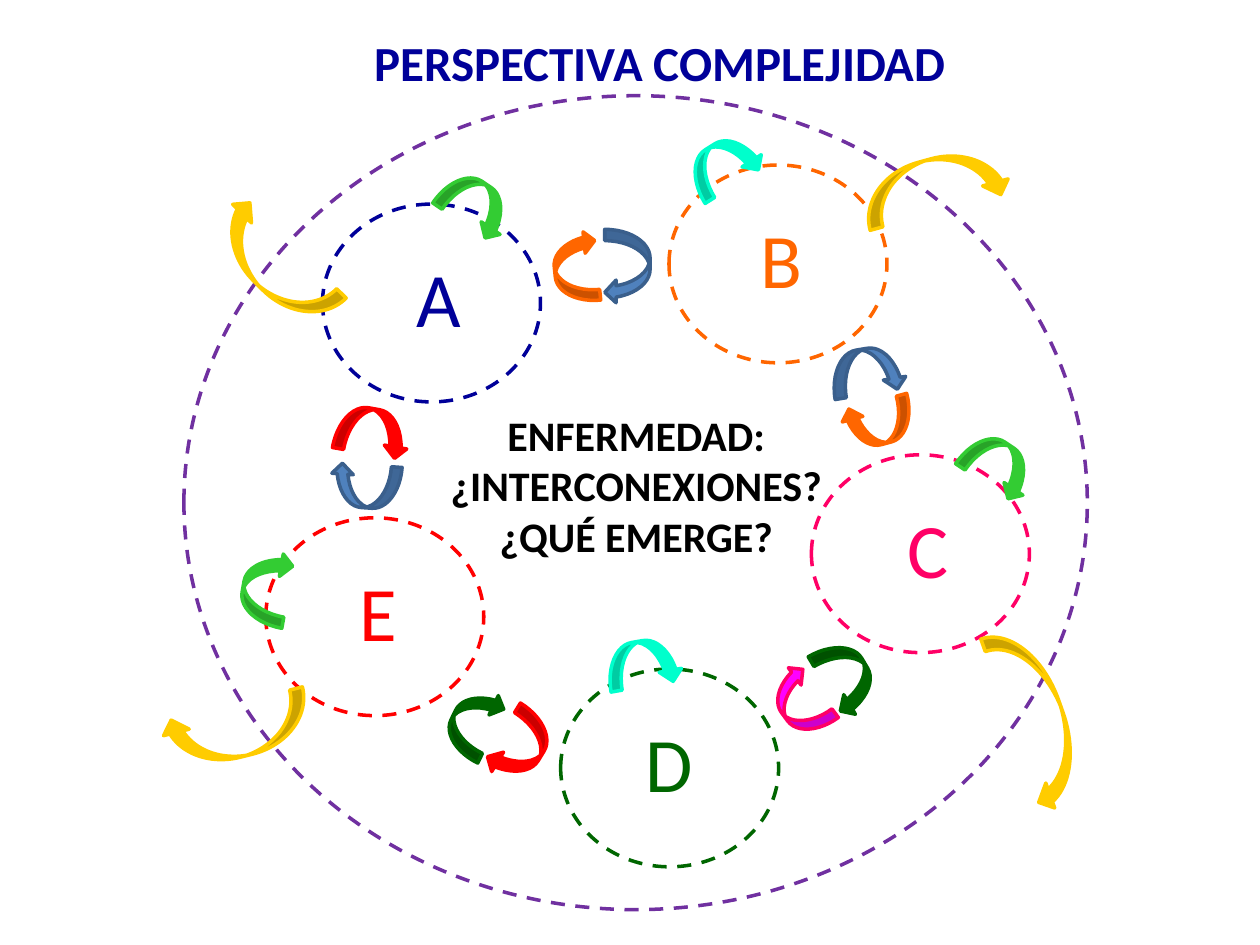
"""Build the slide on complexity: five linked systems inside one whole."""
from pptx import Presentation
from pptx.dml.color import RGBColor
from pptx.enum import dml, shapes, text
from pptx.util import Inches, Pt

NAVY = RGBColor(0x00, 0x00, 0x99)
ORANGE = RGBColor(0xFF, 0x66, 0x00)
PINK = RGBColor(0xFF, 0x00, 0x66)
RED = RGBColor(0xFF, 0x00, 0x00)
GREEN = RGBColor(0x00, 0x66, 0x00)
PURPLE = RGBColor(0x70, 0x30, 0xA0)
MAGENTA = RGBColor(0xFF, 0x00, 0xFF)
BLUE = RGBColor(0x4F, 0x81, 0xBD)
STEEL = RGBColor(0x3A, 0x5F, 0x8C)
LIME = RGBColor(0x33, 0xCC, 0x33)
AQUA = RGBColor(0x00, 0xFF, 0xCC)
GOLD = RGBColor(0xFF, 0xCC, 0x00)
BLACK = RGBColor(0x00, 0x00, 0x00)

TITLE = "PERSPECTIVA COMPLEJIDAD"
CENTER = ["ENFERMEDAD:", "¿INTERCONEXIONES?", "¿QUÉ EMERGE?"]
WHOLE = (1.46, 0.76, 7.17, 6.46)
RING = (1.73, 1.57)
DROP = 0.32

# letter, ring left, ring top, letter left, letter width, colour
SYSTEMS = [
    ("A", 2.56, 1.62, 3.2, 0.56, NAVY),
    ("B", 5.31, 1.31, 5.93, 0.54, ORANGE),
    ("C", 6.44, 3.61, 7.1, 0.53, PINK),
    ("D", 4.45, 5.31, 5.02, 0.58, GREEN),
    ("E", 2.11, 4.11, 2.75, 0.5, RED),
]

WIDE, SLIM = (0.36, 0.59), (0.34, 0.56)
LONG, TALL = (0.42, 1.18), (0.42, 1.48)

LINKS = [
    (3.95, 5.63, WIDE, 31.5, RED, RED),
    (3.59, 5.45, SLIM, 205.7, GREEN, GREEN),
    (6.54, 5.08, WIDE, 329.4, GREEN, GREEN),
    (6.18, 5.29, SLIM, 143.6, MAGENTA, PINK),
    (6.71, 2.65, WIDE, 260.6, BLUE, STEEL),
    (6.8, 3.08, SLIM, 74.8, ORANGE, ORANGE),
    (4.8, 1.82, WIDE, 0, BLUE, STEEL),
    (4.4, 1.84, SLIM, 174.2, ORANGE, ORANGE),
    (2.78, 3.13, WIDE, 279.9, RED, RED),
    (2.73, 3.58, SLIM, 94.1, BLUE, STEEL),
]
LOOPS = [
    (3.6, 1.33, WIDE, 303.8, LIME, LIME),
    (7.75, 3.4, WIDE, 303.8, LIME, LIME),
    (1.93, 4.37, WIDE, 189.9, LIME, LIME),
    (5.57, 1.01, WIDE, 237.8, AQUA, AQUA),
    (4.93, 4.97, WIDE, 260.2, AQUA, AQUA),
]
EXITS = [
    (1.97, 1.51, LONG, 134.7, GOLD, GOLD),
    (1.67, 5.21, LONG, 75.8, GOLD, GOLD),
    (8.02, 4.96, TALL, 340.5, GOLD, GOLD),
    (7.21, 0.88, LONG, 254.7, GOLD, GOLD),
]


def place(box):
    return [Inches(n) for n in box]


def draw(slide, kind, box, line):
    shape = slide.shapes.add_shape(kind, *place(box))
    shape.shadow.inherit = False
    shape.line.color.rgb = line
    shape.line.width = Pt(2)
    return shape


def ring(slide, box, color):
    shape = draw(slide, shapes.MSO_SHAPE.OVAL, box, color)
    shape.fill.background()
    shape.line.dash_style = dml.MSO_LINE.DASH


def arrow(slide, left, top, size, turn, fill, line):
    shape = draw(slide, shapes.MSO_SHAPE.CURVED_LEFT_ARROW, (left, top, *size), line)
    shape.rotation = turn
    shape.fill.solid()
    shape.fill.fore_color.rgb = fill


def write(shape, lines, size, color, bold=True, wrap=False, align=text.PP_ALIGN.CENTER):
    frame = shape.text_frame
    frame.text = "\n".join(lines)
    frame.word_wrap = wrap
    frame.auto_size = text.MSO_AUTO_SIZE.NONE
    frame.vertical_anchor = text.MSO_ANCHOR.TOP
    for para in frame.paragraphs:
        para.alignment = align
        para.font.name = "Calibri"
        para.font.size = Pt(size)
        para.font.bold = bold
        para.font.color.rgb = color


def main():
    deck = Presentation()
    deck.slide_width, deck.slide_height = Inches(10), Inches(7.5)
    slide = deck.slides.add_slide(deck.slide_layouts[5])

    title = slide.shapes.title
    title.left, title.top, title.width, title.height = place((2.87, 0.21, 4.96, 0.57))
    write(title, [TITLE], 28, NAVY, align=text.PP_ALIGN.LEFT)

    ring(slide, WHOLE, PURPLE)
    for letter, left, top, start, width, color in SYSTEMS:
        ring(slide, (left, top, *RING), color)
        label = slide.shapes.add_textbox(*place((start, top + DROP, width, 0.84)))
        write(label, [letter], 44, color, bold=False)

    for item in LINKS + LOOPS + EXITS:
        arrow(slide, *item)

    center = slide.shapes.add_textbox(*place((2.48, 3.2, 5.14, 1.31)))
    write(center, CENTER, 24, BLACK, wrap=True)
    deck.save("out.pptx")


if __name__ == "__main__":
    main()
